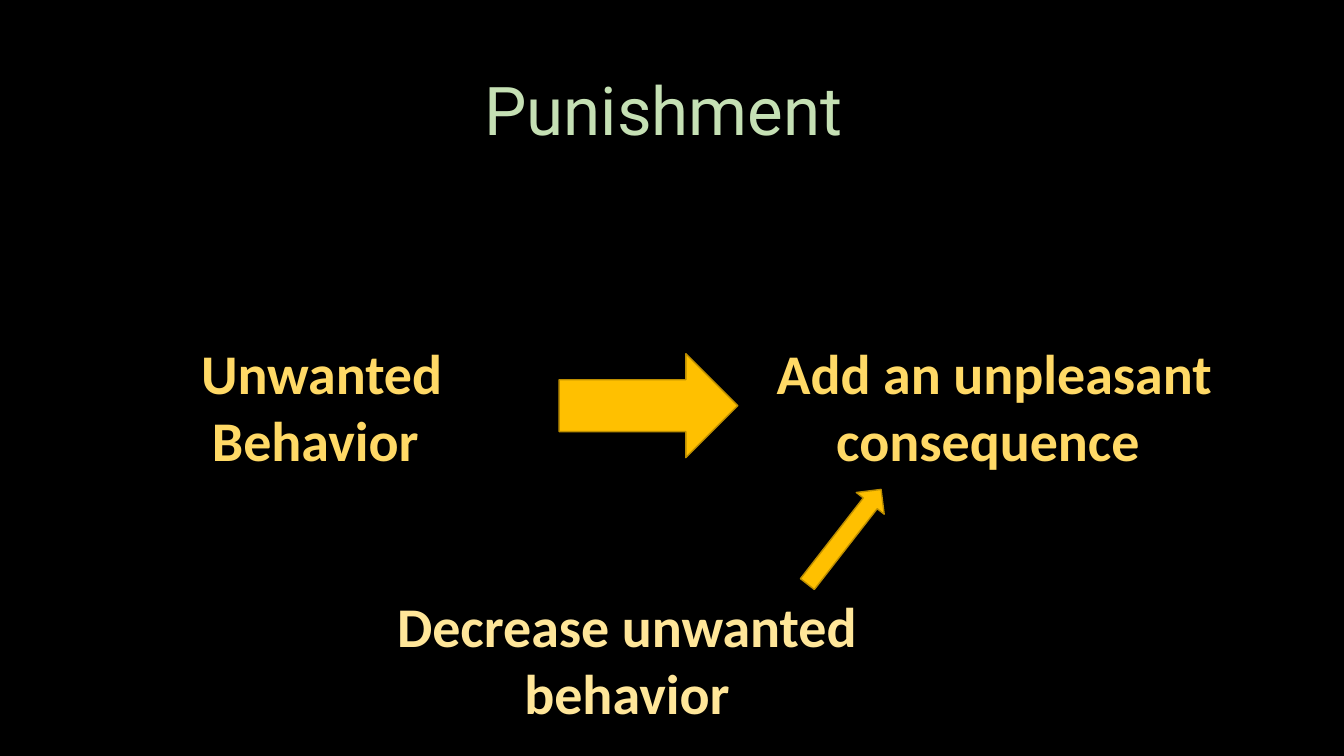
from lxml.etree import SubElement
from pptx import Presentation
from pptx.dml.color import RGBColor
from pptx.enum.shapes import MSO_SHAPE
from pptx.enum.text import MSO_ANCHOR, MSO_AUTO_SIZE, PP_ALIGN
from pptx.oxml.ns import qn
from pptx.util import Pt

BLACK = RGBColor(0x00, 0x00, 0x00)
PALE_GREEN = RGBColor(0xC5, 0xE0, 0xB4)
GOLD = RGBColor(0xFF, 0xD9, 0x66)
PALE_GOLD = RGBColor(0xFF, 0xE6, 0x99)
AMBER = RGBColor(0xFF, 0xC0, 0x00)
DARK_AMBER = RGBColor(0xBD, 0x8E, 0x00)

LABEL_HEIGHT = 104.4
LABEL_ROW_TOP = 237.6


def place(shape, left, top, width, height):
    shape.left, shape.top = Pt(left), Pt(top)
    shape.width, shape.height = Pt(width), Pt(height)


def set_text(shape, text, font_name, size, color, bold=False):
    frame = shape.text_frame
    frame.word_wrap = True
    frame.vertical_anchor = MSO_ANCHOR.MIDDLE
    frame.text = text
    paragraph = frame.paragraphs[0]
    paragraph.alignment = PP_ALIGN.CENTER
    font = paragraph.runs[0].font
    font.name, font.size, font.bold = font_name, Pt(size), bold
    font.color.rgb = color


def set_title(slide, text):
    title = slide.shapes.title
    place(title, 66, 28.8, 828, LABEL_HEIGHT)
    title.fill.solid()
    title.fill.fore_color.rgb = BLACK
    # Make the title fill 60 % opaque
    color = title.fill._xPr.find(qn("a:solidFill"))[0]
    SubElement(color, qn("a:alpha"), val="60000")
    set_text(title, text, "Roboto", 48, PALE_GREEN)
    title.text_frame.paragraphs[0].line_spacing = 0.9


def add_label(slide, text, left, top, width, color):
    label = slide.shapes.add_textbox(Pt(left), Pt(top), Pt(width), Pt(LABEL_HEIGHT))
    set_text(label, text, "Calibri", 40, color, bold=True)
    label.text_frame.auto_size = MSO_AUTO_SIZE.SHAPE_TO_FIT_TEXT


def add_block_arrow(slide, left, top, width, height, rotation=0):
    arrow = slide.shapes.add_shape(
        MSO_SHAPE.RIGHT_ARROW, Pt(left), Pt(top), Pt(width), Pt(height))
    arrow.rotation = rotation
    arrow.shadow.inherit = False
    arrow.fill.solid()
    arrow.fill.fore_color.rgb = AMBER
    arrow.line.color.rgb = DARK_AMBER
    arrow.line.width = Pt(1)


def main():
    presentation = Presentation()
    presentation.slide_width, presentation.slide_height = Pt(960), Pt(540)
    slide = presentation.slides.add_slide(presentation.slide_layouts[5])
    slide.background.fill.solid()
    slide.background.fill.fore_color.rgb = BLACK

    set_title(slide, "Punishment ")

    # Behavior and its consequence
    add_label(slide, "Unwanted Behavior ", 103, LABEL_ROW_TOP, 253.4, GOLD)
    add_label(slide, "Add an unpleasant consequence ", 527, LABEL_ROW_TOP, 366.5, GOLD)
    add_block_arrow(slide, 399.4, 252.7, 127.6, 74.2)

    # Purpose of the consequence
    add_block_arrow(slide, 560.2, 370.8, 85.7, 25.2, rotation=307.9)
    add_label(slide, "Decrease unwanted behavior", 274.3, 418.3, 347, PALE_GOLD)

    presentation.save("out.pptx")


if __name__ == "__main__":
    main()
